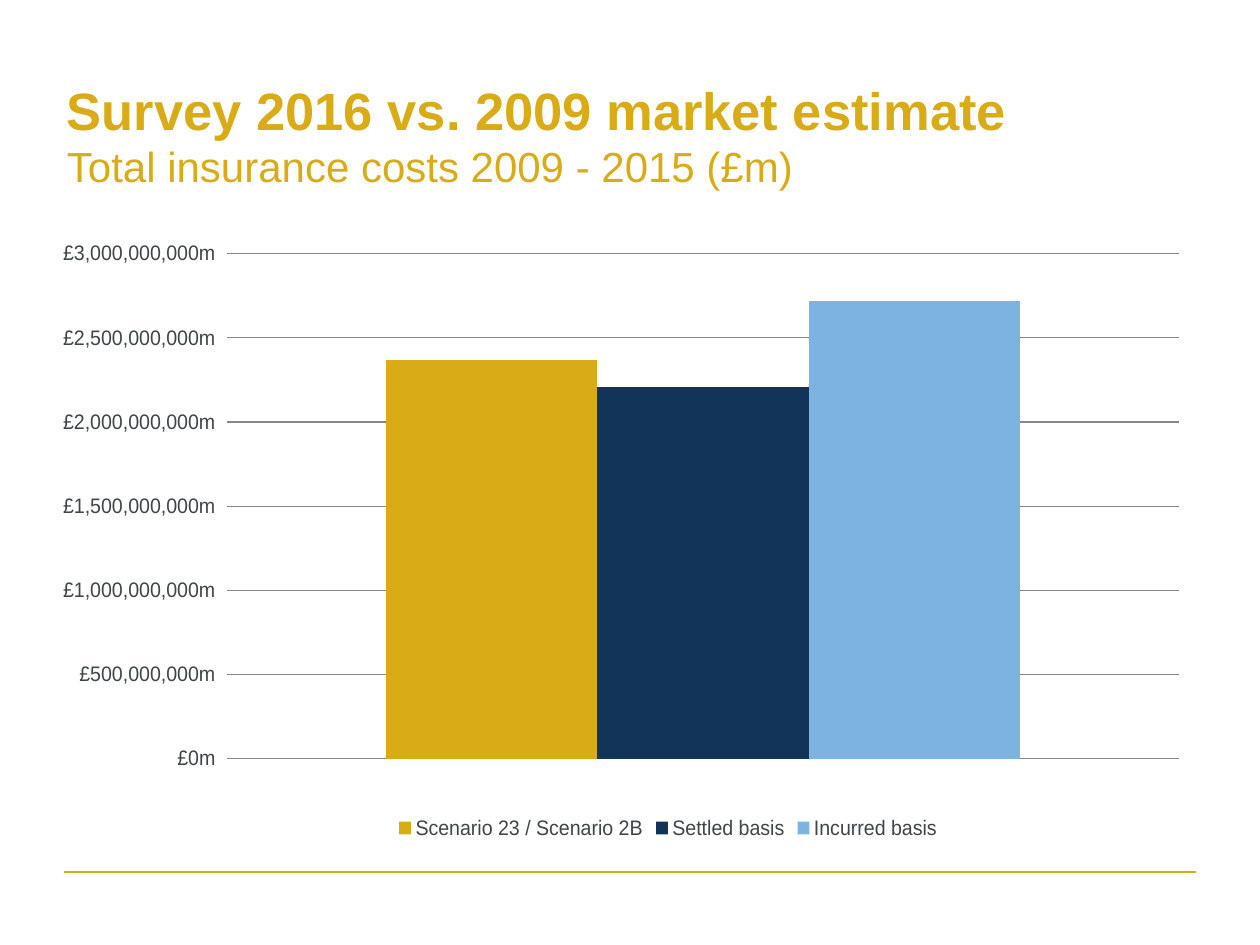
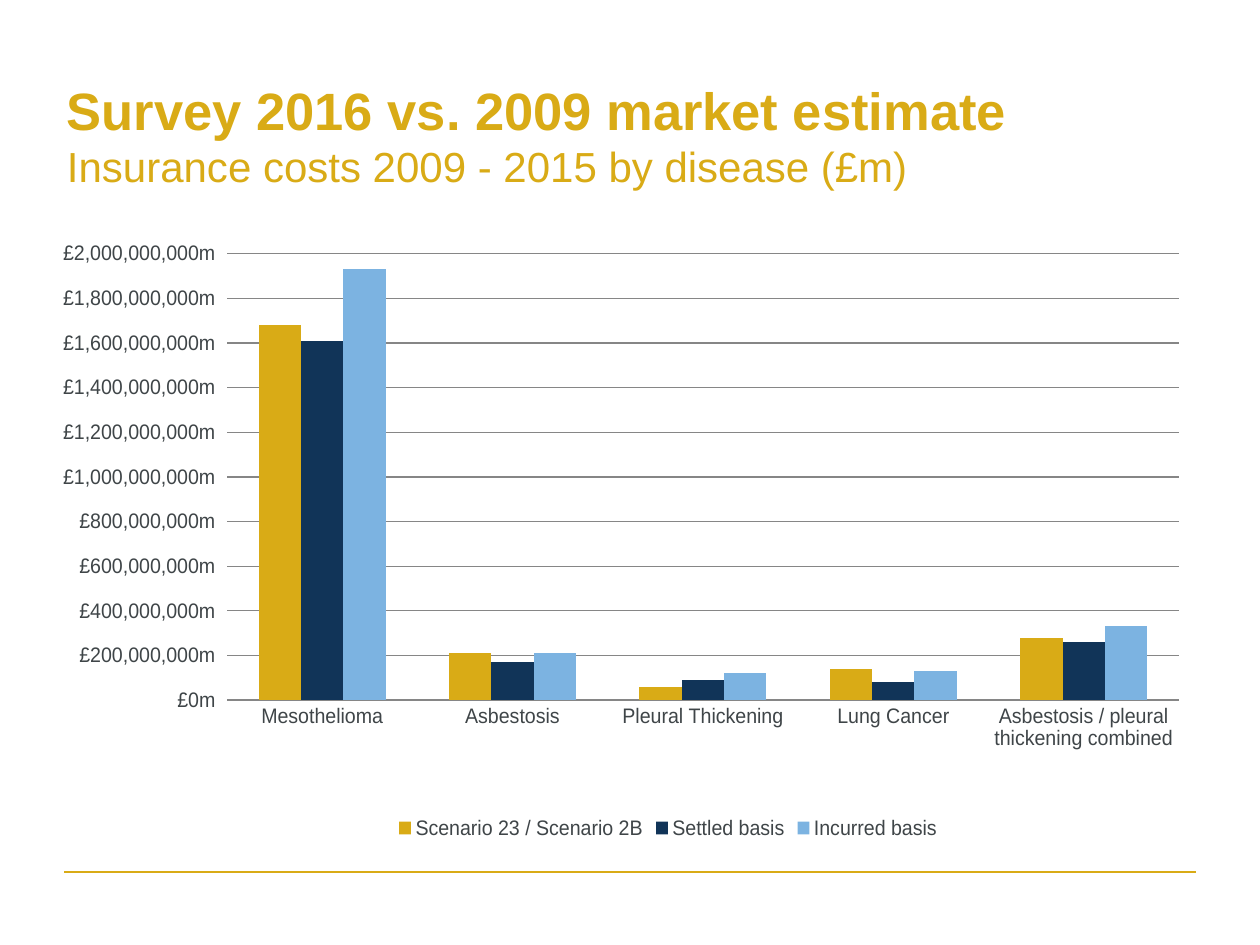
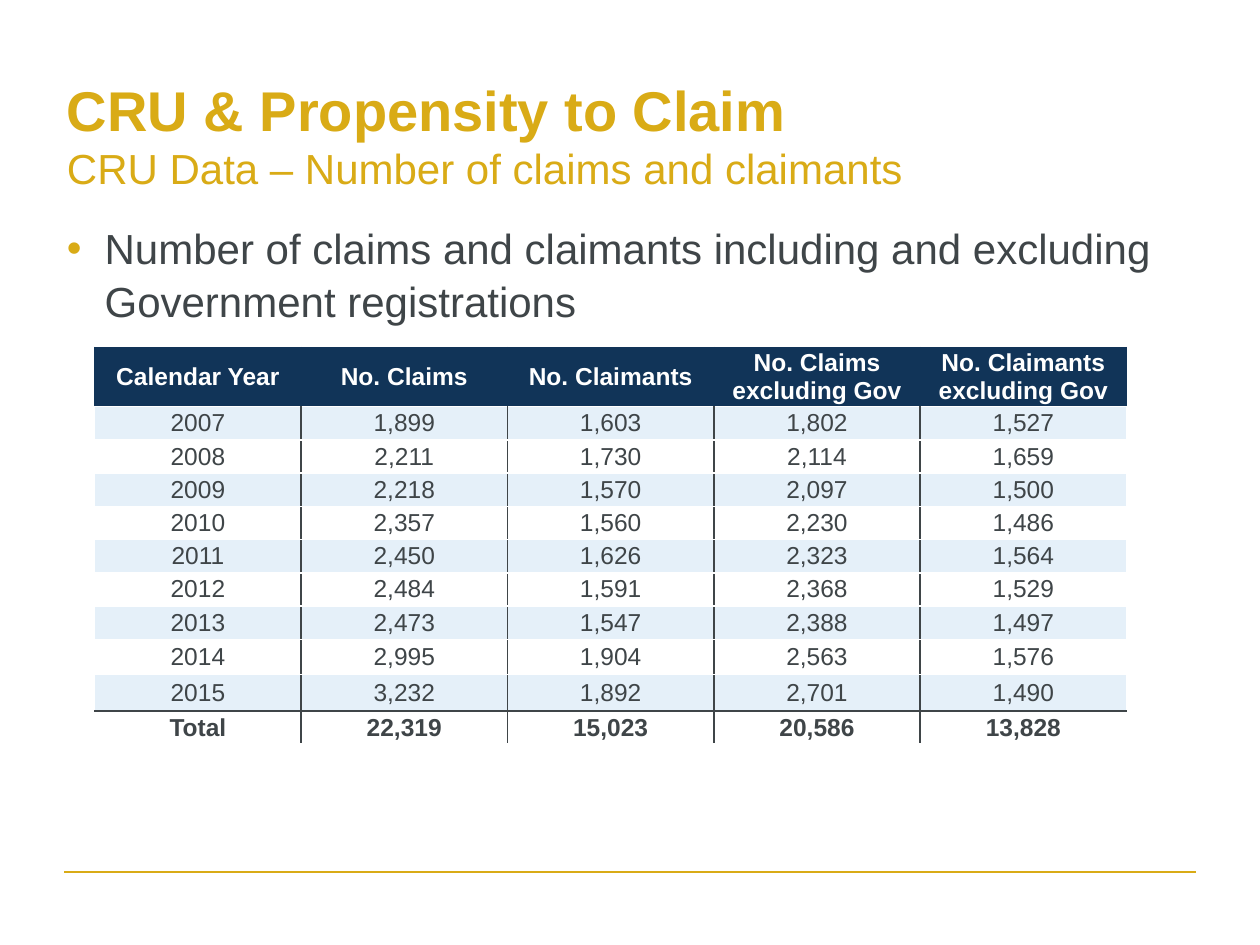
from lxml import etree
from pptx import Presentation
from pptx import util as u
from pptx.chart.data import CategoryChartData
from pptx.dml.color import RGBColor
from pptx.enum import chart as ch, shapes, text
from pptx.oxml import parse_xml
from pptx.oxml.ns import nsdecls, qn


class Theme:
    gold = RGBColor.from_string("D9AB16")
    navy = RGBColor.from_string("113458")
    sky = RGBColor.from_string("7CB3E1")
    pale = RGBColor.from_string("E5F0F9")
    ink = RGBColor.from_string("3F4548")
    grid = RGBColor.from_string("868686")
    white = RGBColor.from_string("FFFFFF")
    face = "Arial"
    subtitle_size = body_size = u.Pt(24)
    table_size = u.Pt(14)
    chart_size = u.Pt(12)


def style(font, size, color, bold=False):
    font.name, font.size, font.bold = Theme.face, size, bold
    font.color.rgb = color


def titled_slide(title, subtitle, title_size):
    """Add a slide with the two-line heading and the gold footer rule."""
    slide = deck.slides.add_slide(deck.slide_layouts[6])
    rule = slide.shapes.add_connector(
        shapes.MSO_CONNECTOR.STRAIGHT, u.Cm(1.3), u.Cm(17.58), u.Cm(24.1), u.Cm(17.58))
    rule.line.color.rgb, rule.line.width = Theme.gold, u.Pt(1)
    etree.SubElement(rule._element.spPr, qn("a:effectLst"))

    heading = slide.shapes.add_textbox(u.Cm(1.1), u.Cm(1.12), u.Cm(23.04), u.Cm(3.18)).text_frame
    heading.word_wrap = True
    heading.vertical_anchor = text.MSO_ANCHOR.MIDDLE
    heading.paragraphs[0].text = f"{title}\v{subtitle}"
    title_run, subtitle_run = heading.paragraphs[0].runs
    style(title_run.font, title_size, Theme.gold, bold=True)
    style(subtitle_run.font, Theme.subtitle_size, Theme.gold)
    return slide


deck = Presentation()
deck.slide_width, deck.slide_height = u.Cm(25.4), u.Cm(19.05)

# Slides 1 and 2: cost charts, values in millions of pounds
bases = [("Scenario 23 / Scenario 2B", Theme.gold),
         ("Settled basis", Theme.navy),
         ("Incurred basis", Theme.sky)]
diseases = ["Mesothelioma", "Asbestosis", "Pleural Thickening", "Lung Cancer",
            "Asbestosis / pleural thickening combined"]
cost_charts = [
    # subtitle, categories, costs per basis, axis top, axis step, plot height
    ("Total insurance costs 2009 - 2015 (£m)", ["1"],
     [[2370], [2210], [2720]], 3000, 500, 0.81),
    ("Insurance costs 2009 - 2015 by disease (£m)", diseases,
     [[1680, 210, 60, 140, 280], [1610, 170, 90, 80, 260], [1930, 210, 120, 130, 330]],
     2000, 200, 0.716),
]
million = 1_000_000

for subtitle, categories, costs, axis_top, axis_step, plot_height in cost_charts:
    slide = titled_slide("Survey 2016 vs. 2009 market estimate", subtitle, u.Pt(30))
    cost_data = CategoryChartData()
    cost_data.categories = categories
    for (basis, _), amounts in zip(bases, costs):
        cost_data.add_series(basis, [amount * million for amount in amounts])
    chart = slide.shapes.add_chart(
        ch.XL_CHART_TYPE.COLUMN_CLUSTERED, u.Cm(1.27), u.Cm(4.45), u.Cm(22.86), u.Cm(12.57),
        cost_data).chart
    chart.has_title = False
    style(chart.font, Theme.chart_size, Theme.ink)

    # Columns
    columns = chart.plots[0]
    columns.gap_width, columns.overlap, columns.vary_by_categories = 150, 0, False
    for series, (_, color) in zip(columns.series, bases):
        series.format.fill.solid()
        series.format.fill.fore_color.rgb = color

    # Axes
    cost_axis = chart.value_axis
    cost_axis.minimum_scale, cost_axis.maximum_scale = 0, axis_top * million
    cost_axis.major_unit = axis_step * million
    cost_axis.tick_labels.number_format = '"£"#,##0"m"'
    cost_axis.tick_labels.number_format_is_linked = False
    cost_axis.format.line.fill.background()
    cost_axis.major_gridlines.format.line.color.rgb = Theme.grid
    disease_axis = chart.category_axis
    disease_axis.visible = len(categories) > 1
    disease_axis.major_tick_mark = ch.XL_TICK_MARK.NONE
    disease_axis.format.line.color.rgb = Theme.grid

    # Legend and plot area
    chart.has_legend = True
    chart.legend.position = ch.XL_LEGEND_POSITION.BOTTOM
    chart.legend.include_in_layout = False
    plot_area = chart._chartSpace.chart.plotArea
    for automatic in plot_area.findall(qn("c:layout")):
        plot_area.remove(automatic)
    plot_area.insert(0, parse_xml(
        f'<c:layout {nsdecls("c")}><c:manualLayout><c:layoutTarget val="inner"/>'
        '<c:xMode val="edge"/><c:yMode val="edge"/><c:x val="0.083"/><c:y val="0.053"/>'
        f'<c:w val="0.9"/><c:h val="{plot_height}"/></c:manualLayout></c:layout>'))

# Slide 3: claims table
slide = titled_slide("CRU & Propensity to Claim",
                     "CRU Data – Number of claims and claimants", u.Pt(32))
intro = slide.shapes.add_textbox(u.Cm(1.1), u.Cm(4.32), u.Cm(23.04), u.Cm(2.6)).text_frame
intro.word_wrap = True
point = intro.paragraphs[0]
point.text = "Number of claims and claimants including and excluding Government registrations"
bullet = point._p.get_or_add_pPr()
bullet.set("marL", str(u.Cm(0.76)))
bullet.set("indent", str(-u.Cm(0.76)))
bullet_color = etree.SubElement(bullet, qn("a:buClr"))
etree.SubElement(bullet_color, qn("a:srgbClr"), val=str(Theme.gold))
etree.SubElement(bullet, qn("a:buFont"), typeface=Theme.face)
etree.SubElement(bullet, qn("a:buChar"), char="•")
point.line_spacing = 1.05
style(point.runs[0].font, Theme.body_size, Theme.ink)

claims = [
    ("Calendar Year", "No. Claims", "No. Claimants",
     "No. Claims excluding Gov", "No. Claimants excluding Gov"),
    ("2007", "1,899", "1,603", "1,802", "1,527"),
    ("2008", "2,211", "1,730", "2,114", "1,659"),
    ("2009", "2,218", "1,570", "2,097", "1,500"),
    ("2010", "2,357", "1,560", "2,230", "1,486"),
    ("2011", "2,450", "1,626", "2,323", "1,564"),
    ("2012", "2,484", "1,591", "2,368", "1,529"),
    ("2013", "2,473", "1,547", "2,388", "1,497"),
    ("2014", "2,995", "1,904", "2,563", "1,576"),
    ("2015", "3,232", "1,892", "2,701", "1,490"),
    ("Total", "22,319", "15,023", "20,586", "13,828"),
]
row_heights = [1.14] + [0.67] * 7 + [0.71, 0.74, 0.66]
total_row, last_column = len(claims) - 1, len(claims[0]) - 1
table = slide.shapes.add_table(len(claims), len(claims[0]), u.Cm(1.91), u.Cm(7.01),
                               u.Cm(20.8), u.Cm(sum(row_heights))).table
for column in table.columns:
    column.width = u.Cm(4.16)

for r, (row, height) in enumerate(zip(claims, row_heights)):
    table.rows[r].height = u.Cm(height)
    header = r == 0
    for c, entry in enumerate(row):
        cell = table.cell(r, c)
        cell.margin_left = cell.margin_right = cell.margin_top = cell.margin_bottom = 0
        cell.vertical_anchor = text.MSO_ANCHOR.MIDDLE
        cell.text_frame.text = entry
        label = cell.text_frame.paragraphs[0]
        label.alignment = text.PP_ALIGN.CENTER
        style(label.runs[0].font, Theme.table_size, Theme.white if header else Theme.ink,
              bold=r in (0, total_row))

        # Borders: dark between columns and above the total, white elsewhere
        if header:
            edges = dict.fromkeys(("lnL", "lnR", "lnT", "lnB"), Theme.navy)
        else:
            edges = {
                "lnL": Theme.white if c == 0 else Theme.ink,
                "lnR": Theme.white if c == last_column else Theme.ink,
                "lnT": Theme.ink if r == total_row else Theme.white,
                "lnB": Theme.ink if r == total_row - 1 else Theme.white,
            }
        for edge, color in edges.items():
            line = etree.SubElement(cell._tc.get_or_add_tcPr(), qn(f"a:{edge}"), w=str(u.Pt(1)))
            line_fill = etree.SubElement(line, qn("a:solidFill"))
            etree.SubElement(line_fill, qn("a:srgbClr"), val=str(color))
        cell.fill.solid()
        cell.fill.fore_color.rgb = Theme.navy if header else Theme.pale if r % 2 else Theme.white

deck.save("out.pptx")
